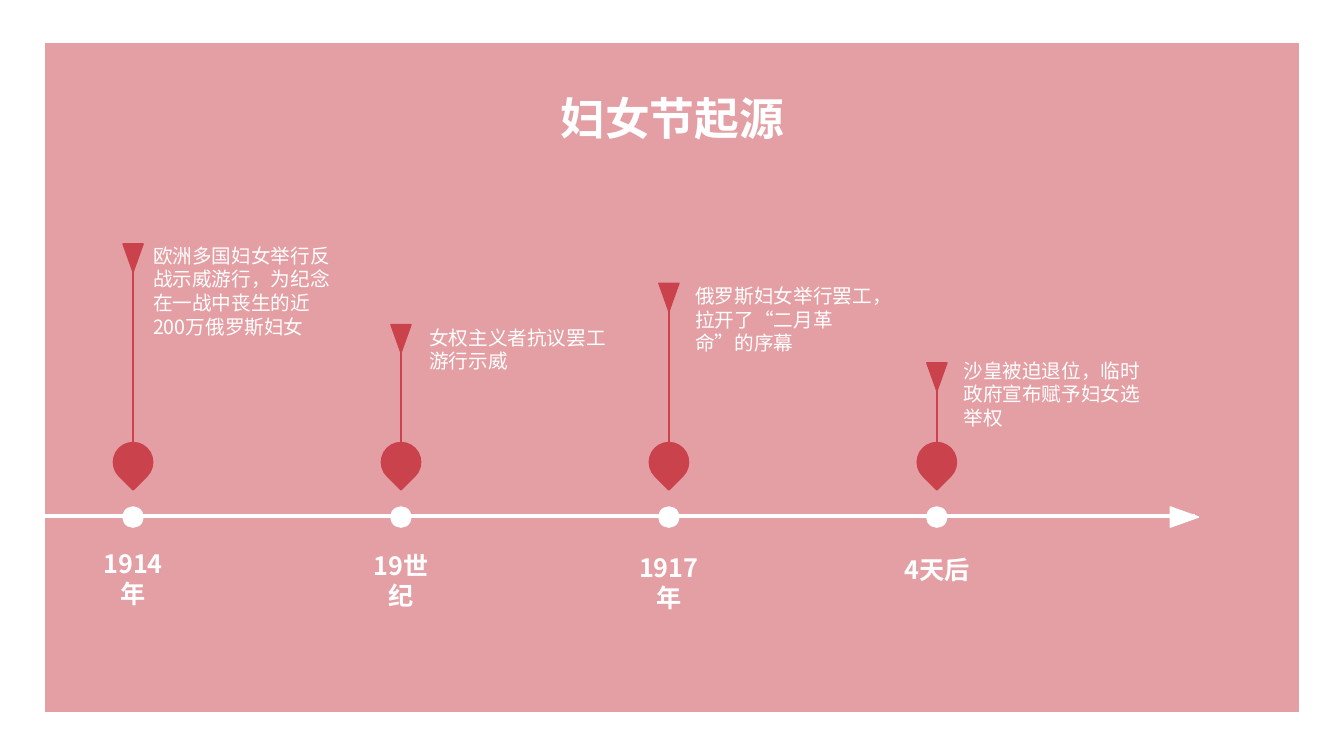
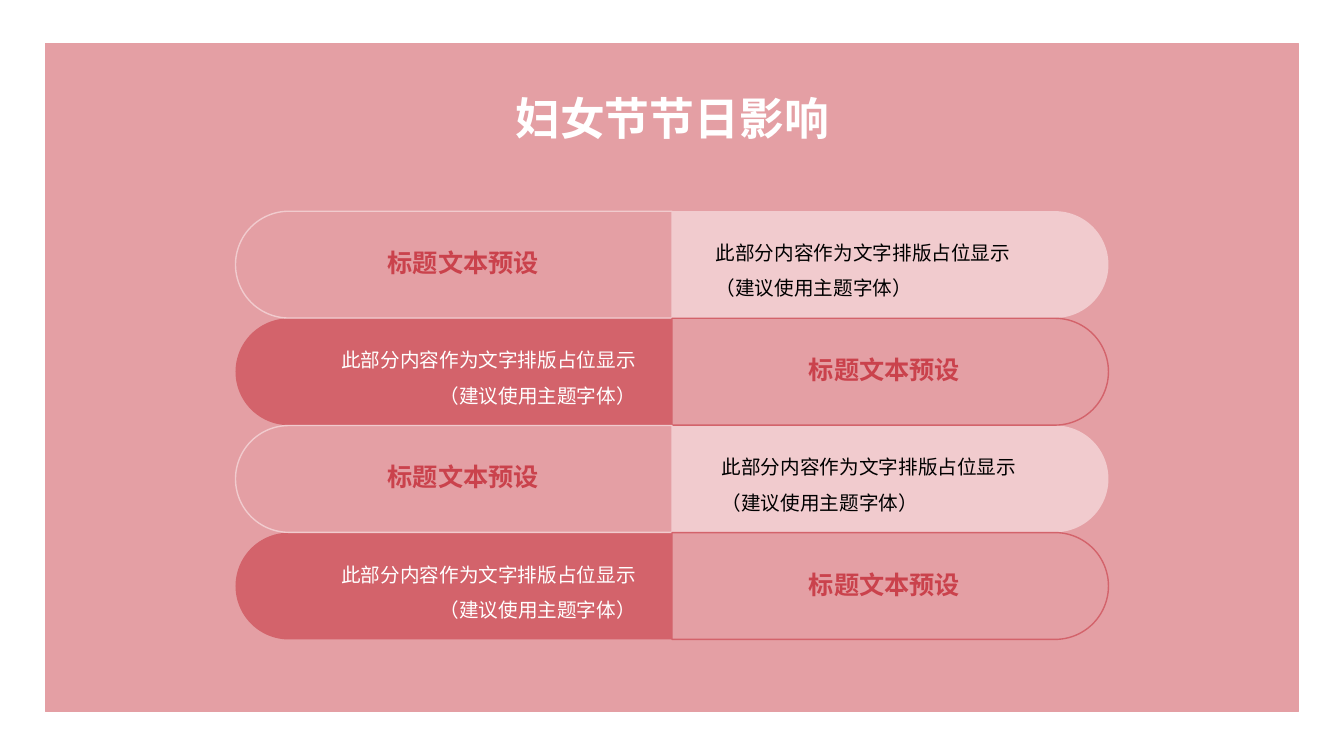
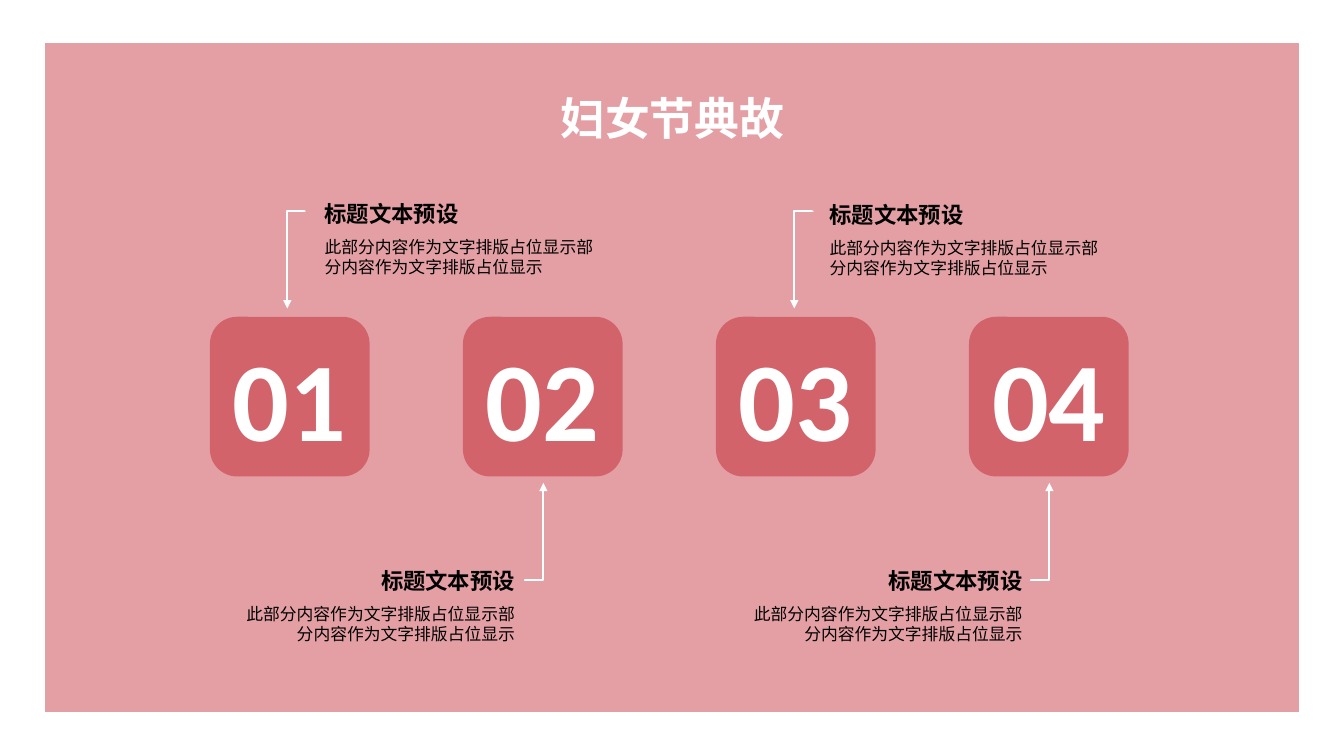
from dataclasses import dataclass

from lxml.etree import SubElement
from pptx import Presentation
from pptx.dml.color import RGBColor as Rgb
from pptx.enum.shapes import MSO_CONNECTOR as Link, MSO_SHAPE as Form
from pptx.enum.text import MSO_ANCHOR as Anchor, MSO_AUTO_SIZE as Fit, PP_ALIGN as Align
from pptx.oxml.ns import qn
from pptx.util import Inches, Pt


@dataclass(frozen=True)
class Theme:
    white: str = "FFFFFF"
    ink: str = "000000"
    rose: str = "E49FA4"
    blush: str = "F1CBCE"
    coral: str = "D3636B"
    crimson: str = "CA424C"
    cjk: str = "Noto Sans CJK SC"
    latin: str = "Calibri"
    title: int = 32
    numeral: int = 80
    label: int = 18
    heading: int = 16
    body: int = 14
    small: int = 12


THEME = Theme()
CELL = Inches(0.1)  # one grid square; the slide has 133.33 columns and 75 rows
COLS, ROWS = 133.33, 75


def cells(*counts):
    return [round(count * CELL) for count in counts]


def assign(target, values):
    for name, value in values.items():
        setattr(target, name, value)


class Deck:
    """Holds the style and the current slide; all lengths are grid cells."""

    def __init__(self, theme):
        self.theme = theme
        self.show = Presentation()
        self.show.slide_width, self.show.slide_height = cells(COLS, ROWS)
        self.layout = self.show.slide_layouts[5]
        self.slide = None

    def start_slide(self, heading):
        self.slide = self.show.slides.add_slide(self.layout)
        if len(self.show.slides) == 1:
            self.share_panel()
        title = self.slide.shapes.title
        place = dict(zip(("left", "top", "width", "height"), cells(46, 8.5, 41.4, 6.4)))
        assign(title, place)
        self.put_words(title, heading, self.theme.title, bold=True, align=Align.CENTER)

    def share_panel(self):
        """Put the rose panel on the layout, behind every slide."""
        panel = self.shape(Form.RECTANGLE, 4.5, 4.3, 124.3, 66.3,
                           self.theme.rose, self.theme.rose).element
        panel.nvSpPr.cNvPr.set("id", "90")
        self.layout.shapes.element.insert(2, panel)

    def put_words(self, holder, text, size, color=None, font=None, bold=False,
                  align=Align.LEFT, anchor=Anchor.TOP, spacing=None, inset=True):
        frame = holder.text_frame
        assign(frame, {"word_wrap": True, "auto_size": Fit.NONE, "vertical_anchor": anchor})
        if not inset:
            assign(frame, {f"margin_{side}": 0 for side in ("left", "top", "right", "bottom")})
        paragraph = frame.paragraphs[0]
        assign(paragraph, {"alignment": align, "line_spacing": spacing})
        run = paragraph.add_run()
        run.text = text
        assign(run.font, {"name": font or self.theme.cjk, "size": Pt(size), "bold": bold})
        run.font.color.rgb = Rgb.from_string(color or self.theme.white)
        for properties in holder.element.iter(qn("a:rPr")):
            SubElement(properties, qn("a:ea"), typeface=self.theme.cjk)

    def text(self, left, top, width, height, words, size, **style):
        box = self.slide.shapes.add_textbox(*cells(left, top, width, height))
        self.put_words(box, words, size, **style)

    def shape(self, form, left, top, width, height, fill=None, line=None, turn=0, adjust=()):
        item = self.slide.shapes.add_shape(form, *cells(left, top, width, height))
        item.shadow.inherit = False
        item.rotation = turn
        for index, value in enumerate(adjust):
            item.adjustments[index] = value
        for paint, color in ((item.fill, fill), (item.line.fill, line)):
            if color:
                paint.solid()
                paint.fore_color.rgb = Rgb.from_string(color)
            else:
                paint.background()
        if line:
            item.line.width = Pt(1)
        return item

    def line(self, x1, y1, x2, y2, color, weight, kind=Link.STRAIGHT):
        link = self.slide.shapes.add_connector(kind, *cells(x1, y1, x2, y2))
        link.line.color.rgb = Rgb.from_string(color)
        link.line.width = Pt(weight)
        SubElement(link.element.spPr, qn("a:effectLst"))
        return link

    def elbow_arrow(self, x1, y1, x2, y2):
        """Run sideways from the start, then up or down to the tip."""
        run, rise = y2 - y1, abs(x2 - x1) * (1 if y2 > y1 else -1)
        mid_x, mid_y = (x1 + x2) / 2, (y1 + y2) / 2
        link = self.line(mid_x - run / 2, mid_y - rise / 2, mid_x + run / 2, mid_y + rise / 2,
                         self.theme.white, 1.5, Link.ELBOW)
        properties = link.element.spPr
        properties.find(qn("a:xfrm")).set("rot", "5400000")
        guides = properties.find(qn("a:prstGeom")).find(qn("a:avLst"))
        SubElement(guides, qn("a:gd"), name="adj1", fmla="val 400")
        SubElement(properties.find(qn("a:ln")), qn("a:tailEnd"), type="triangle")


def origin_slide(deck):
    theme = deck.theme
    deck.start_slide("妇女节起源")
    axis_y, first_x, step = 51.2, 13.2, 26.58

    # Time axis
    deck.line(118.6, axis_y, 4.5, axis_y, theme.white, 3)
    deck.shape(Form.ISOSCELES_TRIANGLE, 116.5, axis_y - 1.3, 2, 2.8,
               theme.white, theme.white, turn=90)

    # Events: date, date top, flag top, text left, text top, text
    events = [
        ("1914年", 53.9, 24.2, 14.2, 23.7, "欧洲多国妇女举行反战示威游行，为纪念在一战中丧生的近200万俄罗斯妇女"),
        ("19世纪", 54.1, 32.2, 41.6, 31.8, "女权主义者抗议罢工游行示威"),
        ("1917年", 54.3, 28.1, 68, 27.7, "俄罗斯妇女举行罢工，拉开了“二月革命”的序幕"),
        ("4天后", 54.5, 36, 94.6, 35.1, "沙皇被迫退位，临时政府宣布赋予妇女选举权"),
    ]
    for index, (date, date_top, flag_top, text_left, text_top, story) in enumerate(events):
        x = first_x + index * step
        deck.shape(Form.OVAL, x - 1, axis_y - 0.9, 2, 2, theme.white, theme.white)
        deck.line(x, 43.9, x, flag_top, theme.crimson, 1.5)
        deck.shape(Form.TEAR, x - 1.95, 43.9, 3.9, 3.9, theme.crimson, theme.crimson, turn=135)
        deck.shape(Form.ISOSCELES_TRIANGLE, x - 1, flag_top, 2, 2.8,
                   theme.crimson, theme.crimson, turn=180)
        deck.text(x - 3.3, date_top + 0.5, 6.6, 5.8, date, theme.label,
                  bold=True, align=Align.CENTER, inset=False)
        deck.text(text_left, text_top, 19.7, 10.4, story, theme.body)


def impact_slide(deck):
    theme = deck.theme
    deck.start_slide("妇女节节日影响")
    top, pitch, half, depth = 20.95, 10.63, 43.3, 10.6
    middle = COLS / 2

    # Half capsules: filled ones first, outlines over them
    for filled in (True, False):
        for row in range(4):
            on_right = (row % 2 == 0) == filled
            color = theme.coral if row % 2 else theme.blush
            center_x = middle + half / 2 * (1 if on_right else -1)
            deck.shape(Form.ROUND_2_SAME_RECTANGLE, center_x - depth / 2,
                       top + row * pitch + (depth - half) / 2, depth, half,
                       fill=color if filled else None, line=None if filled else color,
                       turn=90 if on_right else 270, adjust=(0.5, 0))

    # Row wording
    for row, body_left in enumerate((71, 30.7, 71.6, 30.7)):
        odd, drop = row % 2, row * pitch
        deck.text(body_left, 22.2 + drop, 32.4, 8.1,
                  "此部分内容作为文字排版占位显示（建议使用主题字体）", theme.body,
                  color=theme.white if odd else theme.ink, font=theme.latin,
                  align=Align.RIGHT if odd else Align.LEFT,
                  anchor=Anchor.MIDDLE, spacing=1.5, inset=False)
        deck.text(75.2 if odd else 33.4, 24.55 + drop, 25.1, 3.4, "标题文本预设", theme.label,
                  color=theme.crimson, font=theme.latin, bold=True,
                  align=Align.CENTER, inset=False)


def story_slide(deck):
    theme = deck.theme
    deck.start_slide("妇女节典故")
    side, step, lead = 15.7, 25.1, 1.8

    # Cards: arrow tip x, text edge (left above, right below), heading top
    cards = [(28.5, 32.2, 19.9), (53.9, 51.1, 56.3), (78.8, 82.3, 20), (104.1, 101.45, 56.3)]
    for index, (tip_x, edge, heading_top) in enumerate(cards):
        below = index % 2 == 1
        card = deck.shape(Form.ROUNDED_RECTANGLE, 20.9 + index * step, 31.5, side, side,
                          theme.coral, theme.coral)
        deck.put_words(card, f"{index + 1:02}", theme.numeral, font=theme.latin, bold=True,
                       align=Align.CENTER, anchor=Anchor.MIDDLE)
        if below:
            deck.elbow_arrow(tip_x - lead, 57.55, tip_x, 47.9)
        else:
            deck.elbow_arrow(tip_x + lead, 20.9, tip_x, 30.6)
        style = {"color": theme.ink, "font": theme.latin, "inset": False,
                 "align": Align.RIGHT if below else Align.LEFT}
        deck.text(edge - 25.1 * below, heading_top, 25.1, 3.4, "标题文本预设",
                  theme.heading, bold=True, **style)
        deck.text(edge - 27.2 * below, heading_top + 3.25, 27.2, 4.6,
                  "此部分内容作为文字排版占位显示部分内容作为文字排版占位显示",
                  theme.small, anchor=Anchor.MIDDLE, **style)


def main():
    deck = Deck(THEME)
    for build in (origin_slide, impact_slide, story_slide):
        build(deck)
    deck.show.save("out.pptx")


if __name__ == "__main__":
    main()
